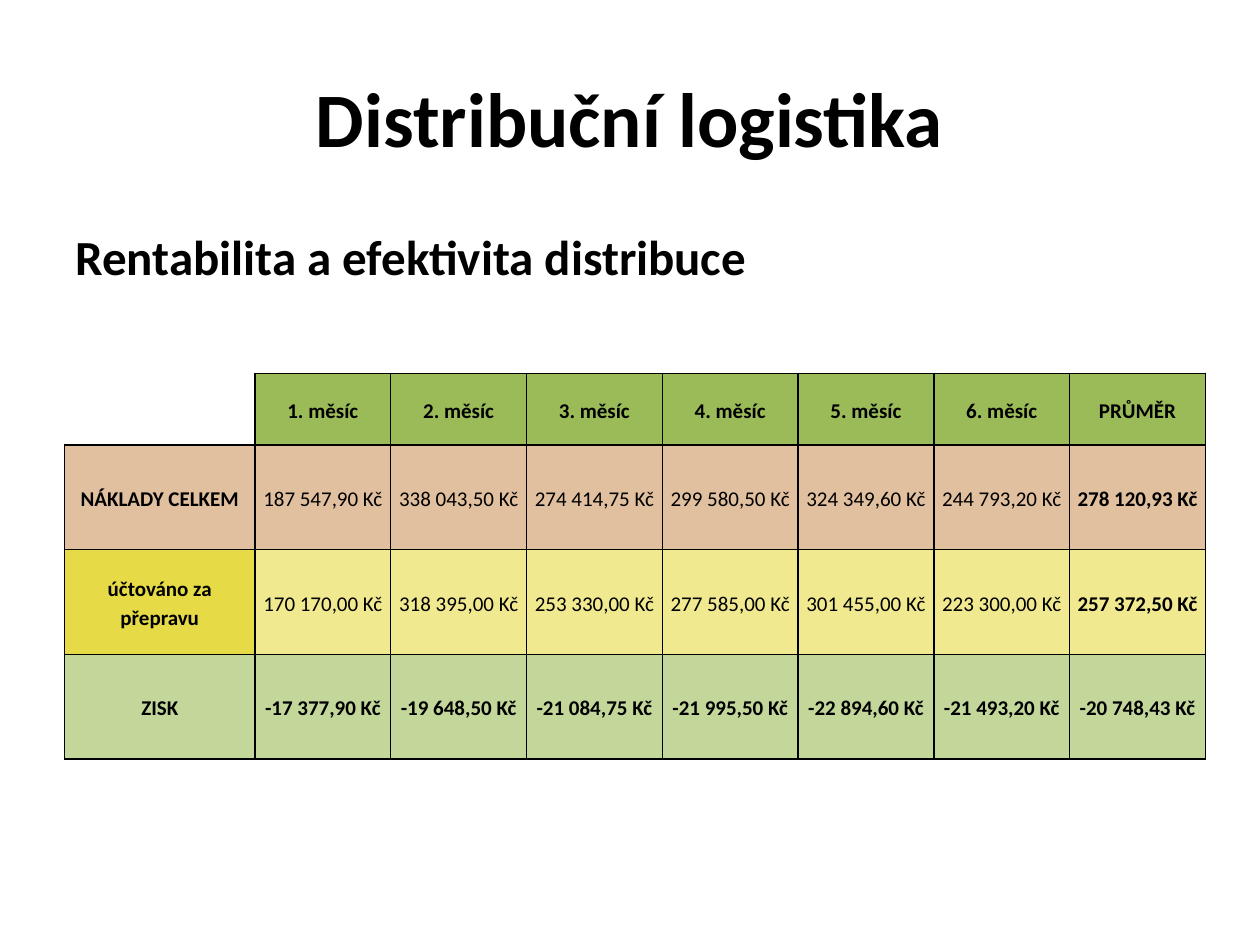
from lxml.etree import SubElement
from pptx import Presentation
from pptx.dml.color import RGBColor
from pptx.enum.text import MSO_ANCHOR, PP_ALIGN
from pptx.oxml.ns import qn
from pptx.util import Pt

TITLE = "Distribuční logistika"
SUBTITLE = "Rentabilita a efektivita distribuce"
ROWS = [
    ["", "1. měsíc", "2. měsíc", "3. měsíc", "4. měsíc", "5. měsíc", "6. měsíc", "PRŮMĚR"],
    ["NÁKLADY CELKEM", "187 547,90 Kč", "338 043,50 Kč", "274 414,75 Kč", "299 580,50 Kč",
     "324 349,60 Kč", "244 793,20 Kč", "278 120,93 Kč"],
    ["účtováno za přepravu", "170 170,00 Kč", "318 395,00 Kč", "253 330,00 Kč", "277 585,00 Kč",
     "301 455,00 Kč", "223 300,00 Kč", "257 372,50 Kč"],
    ["ZISK", "-17 377,90 Kč", "-19 648,50 Kč", "-21 084,75 Kč", "-21 995,50 Kč",
     "-22 894,60 Kč", "-21 493,20 Kč", "-20 748,43 Kč"],
]

FONT = "Calibri"
BLACK = RGBColor(0, 0, 0)
GREEN = RGBColor(0x9B, 0xBB, 0x59)
TAN = RGBColor(0xE1, 0xC0, 0x9F)
YELLOW = RGBColor(0xE6, 0xDB, 0x46)
PALE_YELLOW = RGBColor(0xF0, 0xE9, 0x90)
PALE_GREEN = RGBColor(0xC4, 0xD7, 0x9B)
# Fill of the label cell and of the value cells in each row
ROW_FILLS = [(None, GREEN), (TAN, TAN), (YELLOW, PALE_YELLOW), (PALE_GREEN, PALE_GREEN)]

TABLE_LEFT, TABLE_TOP = 36.9, 213.3
COLUMN_WIDTHS = [108.8] + [77.6] * 7
ROW_HEIGHTS = [41] + [59.8] * 3


def place(shape, left, top, width, height):
    shape.left, shape.top, shape.width, shape.height = Pt(left), Pt(top), Pt(width), Pt(height)


def style_font(font, size, bold=True):
    font.name, font.size, font.bold = FONT, Pt(size), bold
    font.color.rgb = BLACK


def add_borders(cell, sides):
    """Draw 1 pt black lines on the given sides, in the order L, R, T, B."""
    properties = cell._tc.get_or_add_tcPr()
    for side in sides:
        line = SubElement(properties, qn(f"a:ln{side}"), w=str(Pt(1)))
        fill = SubElement(line, qn("a:solidFill"))
        SubElement(fill, qn("a:srgbClr"), val=str(BLACK))


def format_cell(cell, text, fill, bold):
    cell.margin_left = cell.margin_right = Pt(3.6)
    cell.margin_top = cell.margin_bottom = Pt(0)
    cell.vertical_anchor = MSO_ANCHOR.MIDDLE
    add_borders(cell, "LRTB" if text else "RB")
    if fill is None:
        cell.fill.background()
    else:
        cell.fill.solid()
        cell.fill.fore_color.rgb = fill
    cell.text_frame.text = text
    para = cell.text_frame.paragraphs[0]
    para.alignment = PP_ALIGN.CENTER
    para.line_spacing = 1.15
    style_font(para.font, 12, bold)
    for span in para.runs:
        style_font(span.font, 12, bold)


def add_cost_table(page):
    frame = page.shapes.add_table(
        len(ROWS), len(COLUMN_WIDTHS), Pt(TABLE_LEFT), Pt(TABLE_TOP),
        Pt(sum(COLUMN_WIDTHS)), Pt(sum(ROW_HEIGHTS)))
    table = frame.table
    table.first_row = table.horz_banding = False
    for column, width in zip(table.columns, COLUMN_WIDTHS):
        column.width = Pt(width)
    last_row, last_column = len(ROWS) - 1, len(COLUMN_WIDTHS) - 1
    for r, (texts, (label_fill, value_fill)) in enumerate(zip(ROWS, ROW_FILLS)):
        table.rows[r].height = Pt(ROW_HEIGHTS[r])
        for c, text in enumerate(texts):
            bold = r in (0, last_row) or c in (0, last_column)
            format_cell(table.cell(r, c), text, value_fill if c else label_fill, bold)


def main():
    deck = Presentation()
    deck.slide_width, deck.slide_height = Pt(720), Pt(540)
    page = deck.slides.add_slide(deck.slide_layouts[5])

    title = page.shapes.title
    place(title, 36, 21.6, 648, 90)
    title.text_frame.text = TITLE
    title.text_frame.vertical_anchor = MSO_ANCHOR.MIDDLE
    para = title.text_frame.paragraphs[0]
    para.alignment = PP_ALIGN.CENTER
    style_font(para.runs[0].font, 44)

    box = page.shapes.add_textbox(Pt(36), Pt(126), Pt(648), Pt(356.4))
    box.text_frame.word_wrap = True
    box.text_frame.text = SUBTITLE
    style_font(box.text_frame.paragraphs[0].runs[0].font, 28)

    add_cost_table(page)
    deck.save("out.pptx")


if __name__ == "__main__":
    main()
